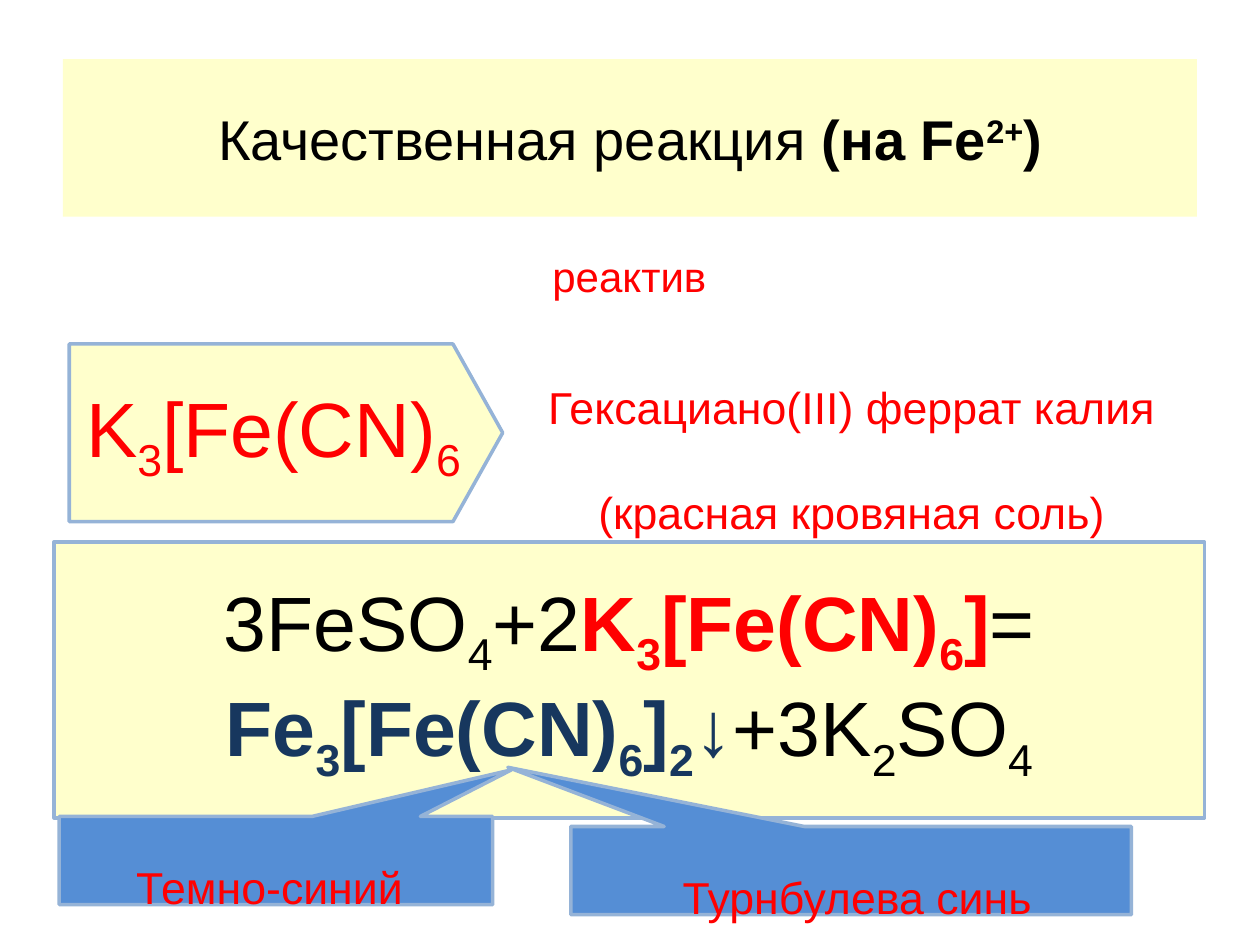
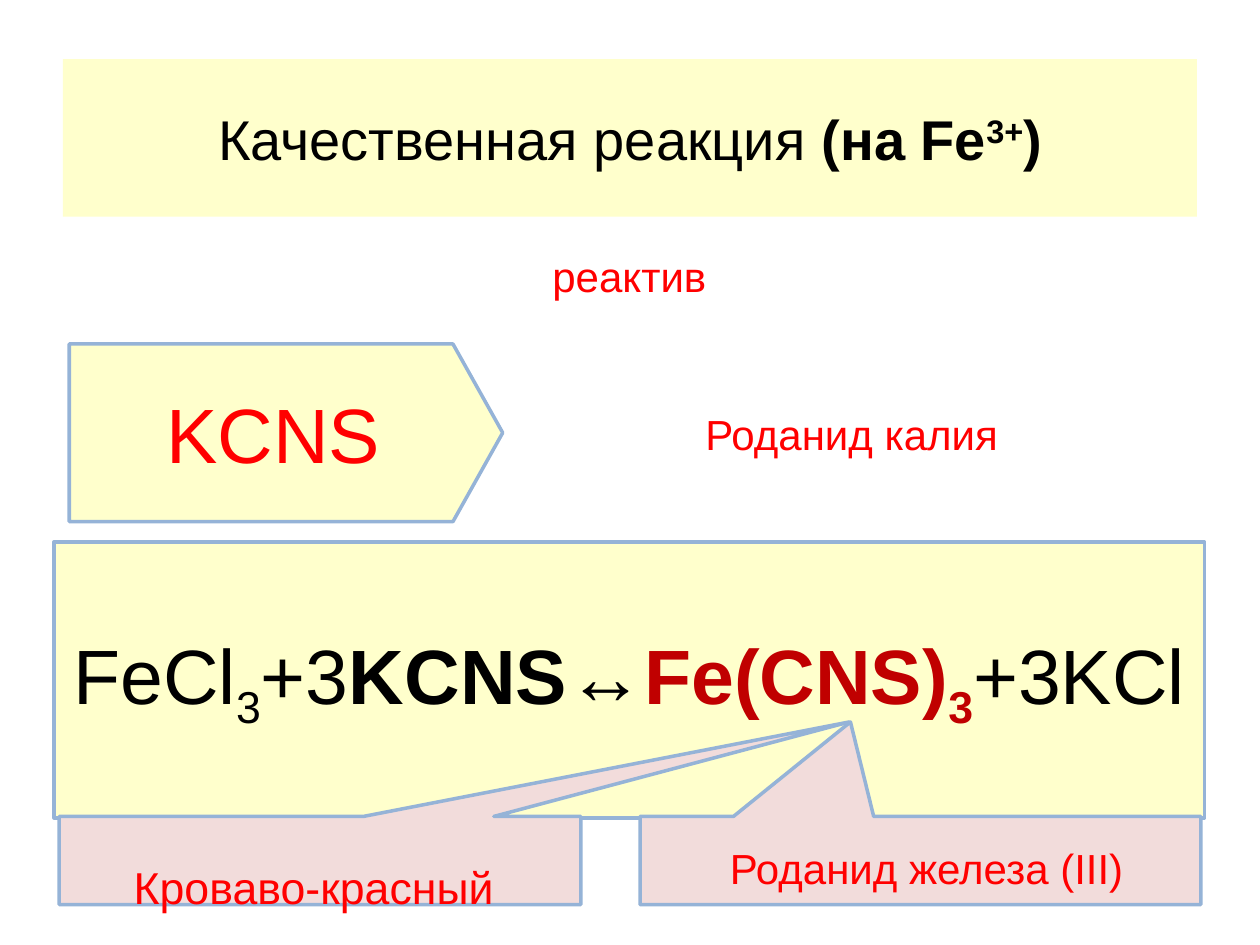
from dataclasses import dataclass
from typing import NamedTuple, Optional

from pptx import Presentation
from pptx.dml.color import RGBColor
from pptx.enum.shapes import MSO_SHAPE
from pptx.enum.text import MSO_ANCHOR, PP_ALIGN
from pptx.util import Inches, Pt

# Slide grid: 100 columns by 75 rows
WIDE, HIGH = Inches(10), Inches(7.5)
COL, ROW = WIDE / 100, HIGH / 75

HUES = {
    "cream": "FFFFCC", "edge": "95B3D7", "black": "000000", "red": "FF0000",
    "navy": "17375E", "blood": "C00000", "blue": "558ED5", "pink": "F2DCDB",
}
BIG, SMALL = 44, 24
LOW, HIGHER = -25, 30


class Area(NamedTuple):
    left: float
    top: float
    width: float
    height: float


class Piece(NamedTuple):
    """Text in one colour; parts between tildes leave the baseline."""
    text: str
    hue: str = "red"
    bold: bool = False
    size: int = BIG
    shift: int = LOW
    face: str = "Arial"


Line = list[Piece]


@dataclass
class Panel:
    area: Area
    lines: list[Line]
    kind: Optional[MSO_SHAPE] = None
    fill: str = "cream"
    edge: bool = True
    point: Optional[float] = None


@dataclass
class Callout:
    area: Area
    tip: tuple[float, float]
    line: Line


@dataclass
class Lesson:
    ion: str
    agent: Line
    name: Line
    sums: list[Line]
    fill: str
    calls: list[Callout]


# Places that both slides share
TITLE = Area(5, 4.7, 90, 12.5)
LABEL = Area(35.5, 18.7, 28.9, 6.3)
AGENT = Area(5.5, 27.3, 34.4, 14.1)
NAME = Area(38.3, 26.6, 58.6, 15.6)
SUMS = Area(4.3, 43, 91.3, 21.9)

LESSONS = [
    Lesson(
        "2+",
        [Piece("K~3~[Fe(CN)~6~")],
        [Piece("~Гексациано(III) феррат калия (красная кровяная соль)~")],
        [
            [Piece("3FeSO~4~+2", "black"), Piece("K~3~[Fe(CN)~6~]", bold=True),
             Piece("=", "black")],
            [Piece("Fe~3~[Fe(CN)~6~]~2~", "navy", True),
             Piece("↓", "navy", True, face="Times New Roman"),
             Piece("+3K~2~SO~4~", "black")],
        ],
        "blue",
        [
            Callout(Area(4.7, 64.8, 34.4, 7), (40.6, 61.1), [Piece("~Темно-синий ~")]),
            Callout(Area(45.3, 65.6, 44.5, 7), (40.3, 60.9), [Piece("~ Турнбулева синь~")]),
        ],
    ),
    Lesson(
        "3+",
        [Piece("KCNS")],
        [Piece("Роданид калия", size=SMALL)],
        [[Piece("FeСl~3~+3", "black"), Piece("KCNS", "black", True),
          Piece("↔", "black"), Piece("Fe(CNS)~3~", "blood", True),
          Piece("+3KCl", "black")]],
        "pink",
        [
            Callout(Area(4.7, 64.8, 41.4, 7), (67.4, 57.3), [Piece("~Кроваво-красный ~")]),
            Callout(Area(50.8, 64.8, 44.5, 7), (67.5, 57.3),
                    [Piece("~ ~"), Piece("Роданид железа (III)", size=SMALL)]),
        ],
    ),
]


def tint(key: str) -> RGBColor:
    return RGBColor.from_string(HUES[key])


def place(area: Area) -> list[int]:
    units = (COL, ROW, COL, ROW)
    return [round(part * unit) for part, unit in zip(area, units)]


def write(frame, lines: list[Line]) -> None:
    frame.word_wrap = True
    frame.vertical_anchor = MSO_ANCHOR.MIDDLE
    for row, line in enumerate(lines):
        para = frame.add_paragraph() if row else frame.paragraphs[0]
        para.alignment = PP_ALIGN.CENTER
        for piece in line:
            for turn, text in enumerate(piece.text.split("~")):
                if not text:
                    continue
                run = para.add_run()
                run.text = text
                font = run.font
                font.name, font.size = piece.face, Pt(piece.size)
                font.bold = piece.bold
                font.color.rgb = tint(piece.hue)
                # Odd parts are subscript or superscript
                if turn % 2:
                    run._r.get_or_add_rPr().set("baseline", str(piece.shift * 1000))


def draw(slide, panel: Panel):
    spot = place(panel.area)
    if panel.kind is None:
        shape = slide.shapes.add_textbox(*spot)
    else:
        shape = slide.shapes.add_shape(panel.kind, *spot)
        shape.shadow.inherit = False
        shape.fill.solid()
        shape.fill.fore_color.rgb = tint(panel.fill)
        if panel.edge:
            shape.line.color.rgb = tint("edge")
            shape.line.width = Pt(2)
        else:
            shape.line.fill.background()
    if panel.point is not None:
        shape.adjustments[0] = panel.point
    write(shape.text_frame, panel.lines)
    return shape


def call(slide, note: Callout, fill: str) -> None:
    area = note.area
    shape = draw(slide, Panel(area, [note.line], MSO_SHAPE.RECTANGULAR_CALLOUT, fill))
    # The tip is measured from the centre of the box
    shape.adjustments[0] = (note.tip[0] - area.left) / area.width - 0.5
    shape.adjustments[1] = (note.tip[1] - area.top) / area.height - 0.5


def build(slide, item: Lesson) -> None:
    title = [Piece("Качественная реакция ", "black", size=32),
             Piece(f"(на Fe~{item.ion}~)", "black", True, 32, HIGHER)]
    panels = [
        Panel(TITLE, [title], MSO_SHAPE.RECTANGLE, edge=False),
        Panel(LABEL, [[Piece("реактив", size=SMALL)]]),
        Panel(AGENT, [item.agent], MSO_SHAPE.PENTAGON, point=0.28),
        Panel(NAME, [item.name]),
        Panel(SUMS, item.sums, MSO_SHAPE.PENTAGON, point=0),
    ]
    for panel in panels:
        draw(slide, panel)
    for note in item.calls:
        call(slide, note, item.fill)


def main() -> None:
    deck = Presentation()
    deck.slide_width, deck.slide_height = WIDE, HIGH
    for item in LESSONS:
        build(deck.slides.add_slide(deck.slide_layouts[6]), item)
    deck.save("out.pptx")


if __name__ == "__main__":
    main()
